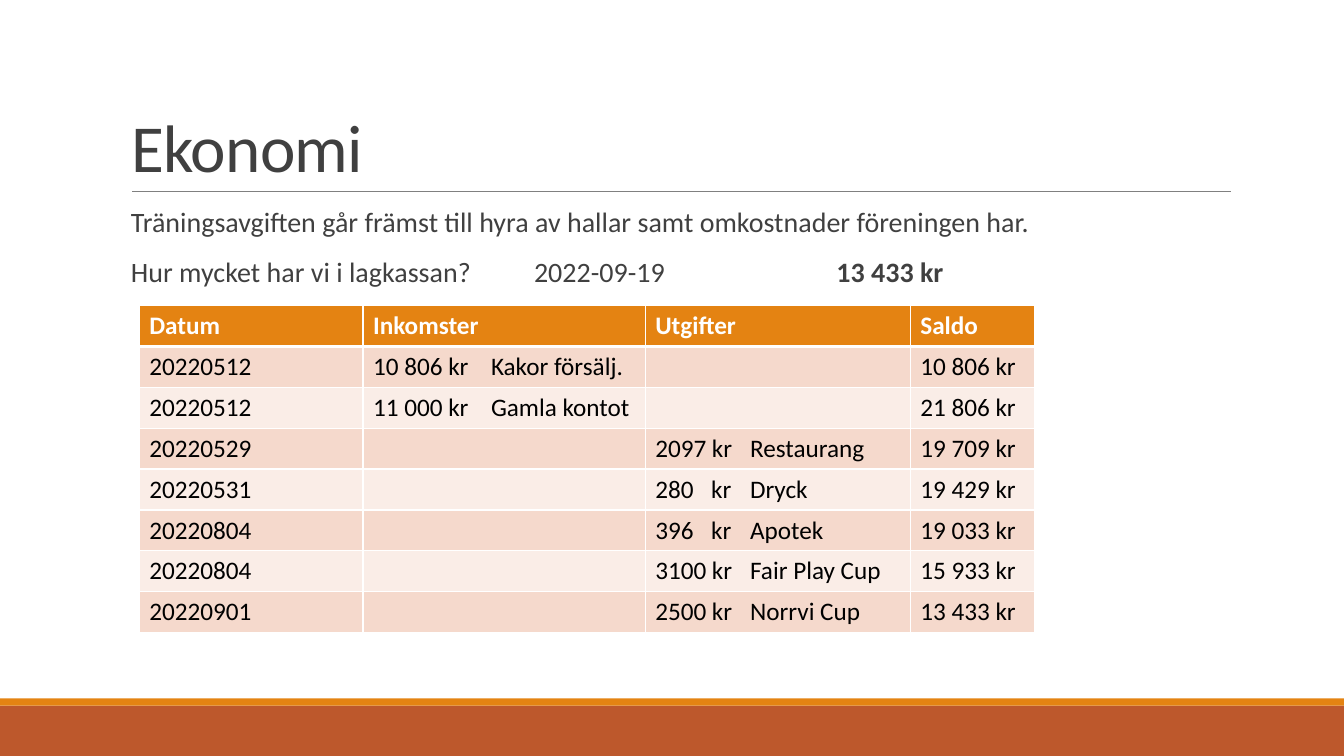
from lxml import etree
from pptx import Presentation
from pptx import util as u
from pptx.dml.color import RGBColor
from pptx.enum import shapes, text
from pptx.oxml import ns

WHITE = RGBColor(0xFF, 0xFF, 0xFF)
BLACK = RGBColor(0, 0, 0)
DARK = RGBColor(0x40, 0x40, 0x40)
GREY = RGBColor(0x80, 0x80, 0x80)
ORANGE = RGBColor(0xE4, 0x83, 0x12)
RUST = RGBColor(0xBD, 0x58, 0x2C)
BANDS = [RGBColor(0xFA, 0xED, 0xE7), RGBColor(0xF5, 0xD9, 0xCC)]

INCOME_TABS = [2.97]
EXPENSE_TABS = [1.41, 2.39]
COLUMN_TABS = [[], INCOME_TABS, EXPENSE_TABS, []]
COLUMN_WIDTHS = [5.64, 7.11, 6.68, 3.13]
LEDGER = [
    ["Datum", "Inkomster", "Utgifter", "Saldo"],
    ["20220512", "10 806 kr\tKakor försälj.", "", "10 806 kr"],
    ["20220512", "11 000 kr\tGamla kontot", "", "21 806 kr"],
    ["20220529", "", "2097 kr\tRestaurang", "19 709 kr"],
    ["20220531", "", "280\tkr\tDryck", "19 429 kr"],
    ["20220804", "", "396\tkr\tApotek", "19 033 kr"],
    ["20220804", "", "3100 kr\tFair Play Cup", "15 933 kr"],
    ["20220901", "", "2500 kr\tNorrvi Cup", "13 433 kr"],
]


class SlideBuilder:
    """Draws styled elements on the current slide."""

    font = "Calibri"

    def __init__(self, deck):
        """Add a title-only slide to the deck."""
        self.page = deck.slides.add_slide(deck.slide_layouts[5])

    def add_span(self, para, wording, size, color, bold=False):
        """Append one formatted run."""
        span = para.add_run()
        span.text = wording
        span.font.name = self.font
        span.font.size = u.Pt(size)
        span.font.bold = bold
        span.font.color.rgb = color
        return span

    def add_tabs(self, para, stops):
        """Set left tab stops given in centimetres."""
        if stops:
            tabs = etree.SubElement(para._p.get_or_add_pPr(), ns.qn("a:tabLst"))
            for stop in stops:
                etree.SubElement(tabs, ns.qn("a:tab"), pos=str(u.Cm(stop)), algn="l")

    def add_bar(self, top, height, color):
        """Draw a full-width bar."""
        bar = self.page.shapes.add_shape(
            shapes.MSO_SHAPE.RECTANGLE, 0, u.Cm(top), u.Cm(33.87), u.Cm(height))
        bar.shadow.inherit = False
        bar.fill.solid()
        bar.fill.fore_color.rgb = color
        bar.line.fill.background()

    def add_rule(self, left, right, y):
        """Draw a thin horizontal line."""
        rule = self.page.shapes.add_connector(
            shapes.MSO_CONNECTOR.STRAIGHT, u.Cm(left), u.Cm(y), u.Cm(right), u.Cm(y))
        rule.line.color.rgb = GREY
        rule.line.width = u.Pt(0.5)
        etree.SubElement(rule._element.spPr, ns.qn("a:effectLst"))

    def add_title(self, wording):
        """Place and format the title placeholder."""
        title = self.page.shapes.title
        title.left, title.top = u.Cm(3.05), u.Cm(0.79)
        title.width, title.height = u.Cm(27.94), u.Cm(4.04)
        title.text_frame.vertical_anchor = text.MSO_ANCHOR.BOTTOM
        para = title.text_frame.paragraphs[0]
        para.alignment = text.PP_ALIGN.LEFT
        para.line_spacing = 0.85
        span = self.add_span(para, wording, 48, DARK)
        span.font._element.set("spc", "-50")

    def add_body(self, paragraphs, stops):
        """Add the paragraphs, each a list of wording and bold pairs."""
        box = self.page.shapes.add_textbox(u.Cm(3.05), u.Cm(5.13), u.Cm(27.94), u.Cm(2.5))
        frame = box.text_frame
        frame.word_wrap = True
        frame.margin_left = frame.margin_right = 0
        for index, spans in enumerate(paragraphs):
            para = frame.add_paragraph() if index else frame.paragraphs[0]
            para.line_spacing = 0.9
            para.space_before = u.Pt(12 if index else 0)
            para.space_after = u.Pt(2)
            para._p.get_or_add_pPr().set("marL", str(u.Cm(0.25)))
            self.add_tabs(para, stops)
            for wording, bold in spans:
                self.add_span(para, wording, 20, DARK, bold)

    def add_borders(self, cell, top, bottom):
        """Give a cell white borders, with top and bottom widths in points."""
        properties = cell._tc.get_or_add_tcPr()
        for side, width in zip("LRTB", (1, 1, top, bottom)):
            line = etree.SubElement(properties, ns.qn(f"a:ln{side}"), w=str(u.Pt(width)))
            fill = etree.SubElement(line, ns.qn("a:solidFill"))
            etree.SubElement(fill, ns.qn("a:srgbClr"), val=str(WHITE))

    def add_table(self, rows, widths, column_tabs):
        """Add a banded table with a header row."""
        table = self.page.shapes.add_table(
            len(rows), len(widths), u.Cm(3.51), u.Cm(7.7),
            u.Cm(sum(widths)), u.Cm(1.03 * len(rows))).table
        for column, width in zip(table.columns, widths):
            column.width = u.Cm(width)
        for r, row in enumerate(rows):
            header = r == 0
            for c, wording in enumerate(row):
                cell = table.cell(r, c)
                self.add_borders(cell, 3 if r == 1 else 1, 3 if header else 1)
                cell.fill.solid()
                cell.fill.fore_color.rgb = ORANGE if header else BANDS[r % 2]
                if wording:
                    para = cell.text_frame.paragraphs[0]
                    if "\t" in wording:
                        self.add_tabs(para, column_tabs[c])
                    self.add_span(para, wording, 18, WHITE if header else BLACK, header)


def main():
    """Build and save the deck."""
    deck = Presentation()
    deck.slide_width, deck.slide_height = u.Cm(33.87), u.Cm(19.05)
    builder = SlideBuilder(deck)
    builder.add_bar(17.78, 1.27, RUST)
    builder.add_bar(17.6, 0.18, ORANGE)
    builder.add_rule(3.33, 31.01, 4.83)
    builder.add_title("Ekonomi")
    builder.add_body([
        [("Träningsavgiften går främst till hyra av hallar samt omkostnader föreningen har.", False)],
        [("Hur mycket har vi i lagkassan?\t2022-09-19\t", False), ("13 433 kr", True)],
    ], [10.16, 17.78])
    builder.add_table(LEDGER, COLUMN_WIDTHS, COLUMN_TABS)
    deck.save("out.pptx")


if __name__ == "__main__":
    main()
